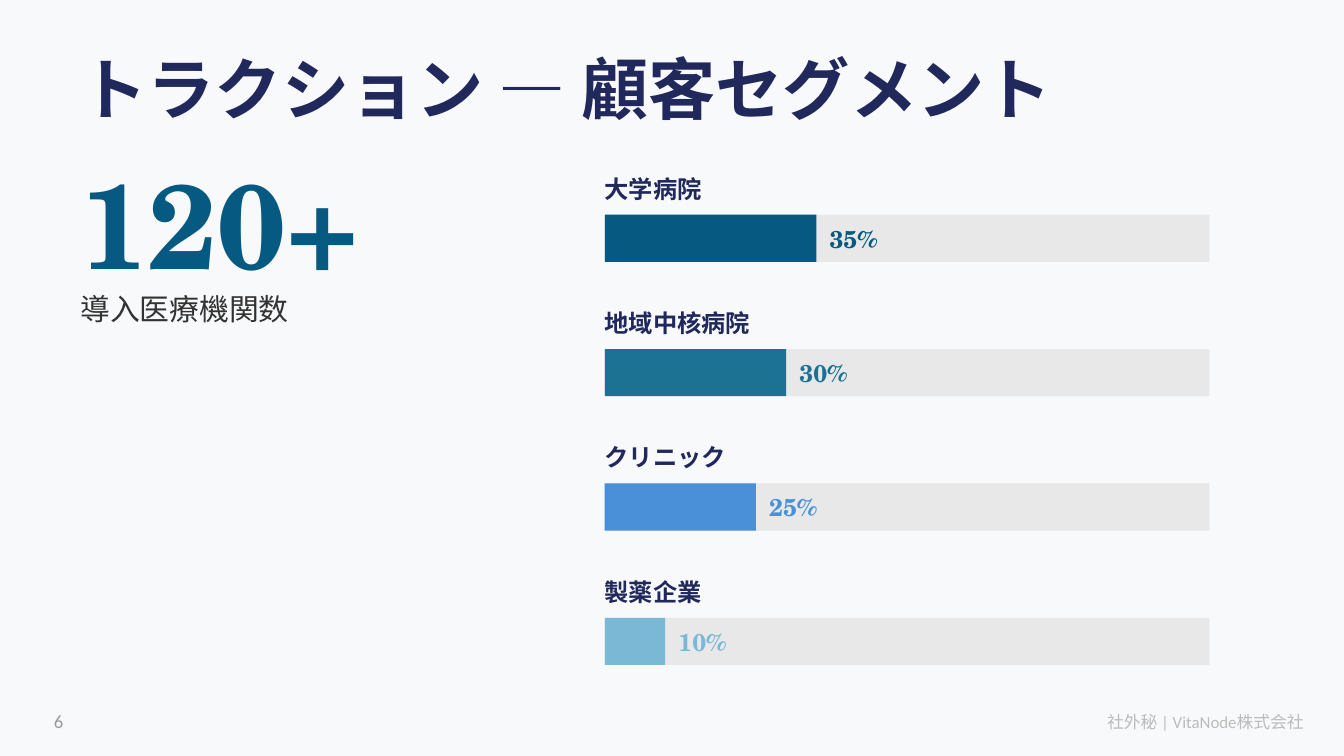
from pptx import Presentation
from pptx.dml.color import RGBColor as Rgb
from pptx.enum.shapes import MSO_SHAPE as Kind
from pptx.enum.text import MSO_ANCHOR as Anchor, MSO_AUTO_SIZE as Fit, PP_ALIGN as Align
from pptx.util import Cm, Pt

TITLE = "トラクション — 顧客セグメント"
TOTAL = "120+"
NOTE = "導入医療機関数"
PAGE = "6"
FOOT = "社外秘 | VitaNode株式会社"
GROUPS = [
    ("大学病院", 35, "065A82"),
    ("地域中核病院", 30, "1C7293"),
    ("クリニック", 25, "4A90D9"),
    ("製薬企業", 10, "7AB8D6"),
]

THEME = {
    "head": "TeX Gyre Schola", "body": "Calibri",
    "back": "F8F9FA", "navy": "21295C", "teal": "065A82", "text": "333333",
    "track": "E8E8E8", "page": "999999", "foot": "BBBBBB",
    "title": 36, "total": 64, "note": 16, "label": 13, "num": 10, "small": 9,
}

LEFT, TOP, STEP = 11.43, 3.18, 2.54
WIDE, HIGH, DROP, GAP = 11.43, 0.89, 0.88, 0.25


def place(shape, x, y, w, h):
    shape.left, shape.top, shape.width, shape.height = Cm(x), Cm(y), Cm(w), Cm(h)


def style(shape, text, font, size, color, bold=False, align=Align.LEFT, anchor=Anchor.MIDDLE):
    frame = shape.text_frame
    frame.text = text
    frame.word_wrap = True
    frame.auto_size = Fit.NONE
    frame.vertical_anchor = anchor
    frame.margin_left = frame.margin_right = frame.margin_top = frame.margin_bottom = 0
    para = frame.paragraphs[0]
    para.alignment = align
    face = para.runs[0].font
    face.name, face.size, face.bold = THEME[font], Pt(THEME[size]), bold
    face.color.rgb = Rgb.from_string(color)


def write(slide, box, *args, **more):
    style(slide.shapes.add_textbox(*map(Cm, box)), *args, **more)


def bar(slide, x, y, w, color):
    shape = slide.shapes.add_shape(Kind.RECTANGLE, Cm(x), Cm(y), Cm(w), Cm(HIGH))
    shape.shadow.inherit = False
    shape.fill.solid()
    shape.fill.fore_color.rgb = Rgb.from_string(color)
    shape.line.fill.background()


def main():
    deck = Presentation()
    deck.slide_width, deck.slide_height = Cm(25.4), Cm(14.29)
    slide = deck.slides.add_slide(deck.slide_layouts[5])
    slide.background.fill.solid()
    slide.background.fill.fore_color.rgb = Rgb.from_string(THEME["back"])

    title = slide.shapes.title
    place(title, 1.52, 0.76, 22.86, 1.78)
    style(title, TITLE, "head", "title", THEME["navy"], bold=True)
    write(slide, (1.52, 2.92, 8.89, 2.54), TOTAL, "head", "total", THEME["teal"], bold=True)
    write(slide, (1.52, 5.33, 8.89, 1.02), NOTE, "body", "note", THEME["text"])

    for i, (name, share, color) in enumerate(GROUPS):
        y = TOP + i * STEP
        fill = WIDE * share / 100
        write(slide, (LEFT, y, 5.08, 0.76), name, "body", "label", THEME["navy"], bold=True)
        bar(slide, LEFT, y + DROP, WIDE, THEME["track"])
        bar(slide, LEFT, y + DROP, fill, color)
        write(slide, (LEFT + fill + GAP, y + DROP, 1.52, HIGH), f"{share}%",
              "head", "label", color, bold=True)

    write(slide, (1.02, 13.08, 1.27, 0.76), PAGE, "body", "num", THEME["page"],
          anchor=Anchor.BOTTOM)
    write(slide, (17.78, 13.08, 6.86, 0.76), FOOT, "body", "small", THEME["foot"],
          align=Align.RIGHT, anchor=Anchor.BOTTOM)
    deck.save("out.pptx")


if __name__ == "__main__":
    main()
